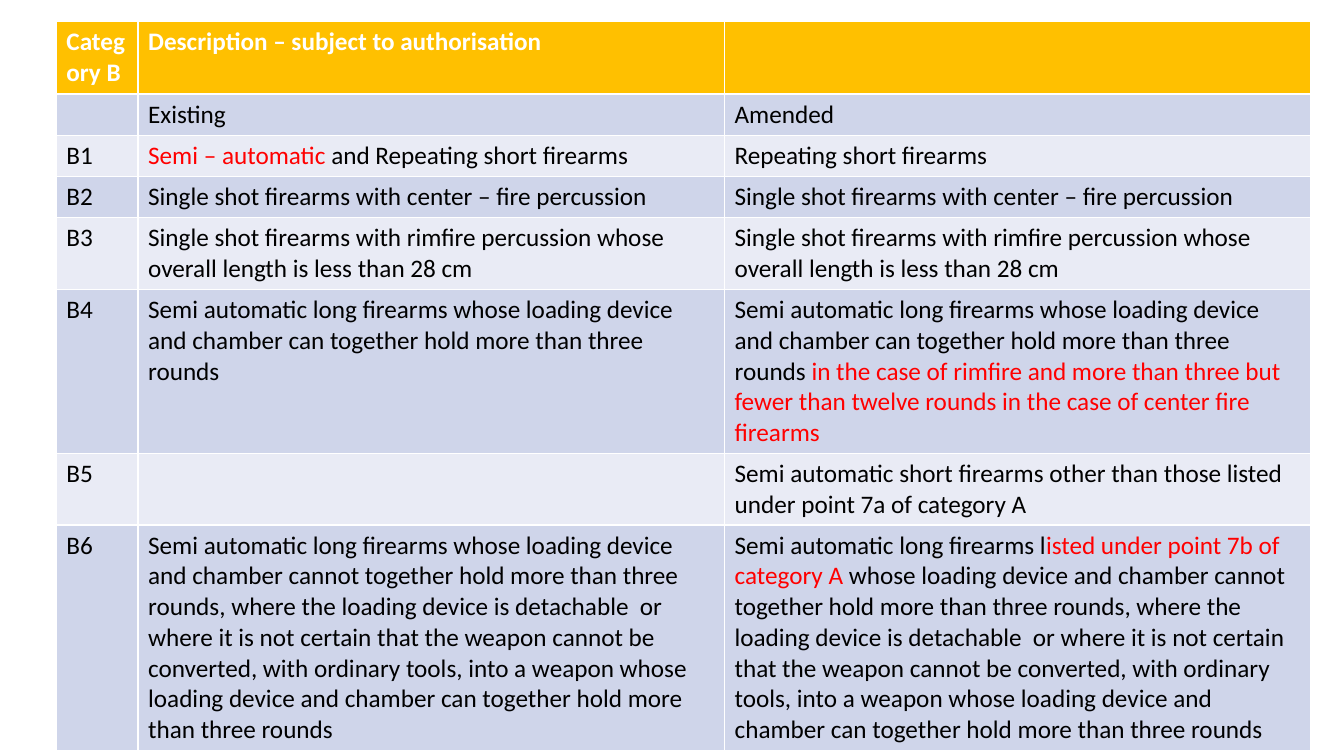
"""Build a slide comparing existing and amended category B firearms."""
from dataclasses import dataclass
from typing import NamedTuple

from pptx import Presentation
from pptx import util as u
from pptx.dml import color


@dataclass(frozen=True)
class Theme:
    face: str = "Calibri"
    size: int = 18
    head: str = "FFC000"
    bands: tuple[str, str] = ("CFD5EA", "E9EBF5")
    light: str = "FFFFFF"
    dark: str = "000000"
    alert: str = "FF0000"


class Span(NamedTuple):
    text: str
    hot: bool = False


class Row(NamedTuple):
    code: str
    old: tuple[Span, ...]
    new: tuple[Span, ...]


THEME = Theme()
WIDTHS = (2.06, 14.78, 14.78)
HEAD, LINE = 1.83, 1.04

SINGLE = (Span("Single shot firearms with center – fire percussion"),)
RIM = (Span("Single shot firearms with rimfire percussion whose overall length is less than 28 cm"),)
LONG = "Semi automatic long firearms "
HOLD = "whose loading device and chamber can together hold more than three rounds"
TOOLS = (
    "whose loading device and chamber cannot together hold more than three rounds, "
    "where the loading device is detachable  or where it is not certain that the weapon "
    "cannot be converted, with ordinary tools, into a weapon " + HOLD
)

ROWS = (
    Row("Category B", (Span("Description – subject to authorisation"),), ()),
    Row("", (Span("Existing"),), (Span("Amended"),)),
    Row("B1", (Span("Semi – automatic ", True), Span("and Repeating short firearms")),
        (Span("Repeating short firearms"),)),
    Row("B2", SINGLE, SINGLE),
    Row("B3", RIM, RIM),
    Row("B4", (Span(LONG + HOLD),),
        (Span(LONG + HOLD + " "),
         Span("in the case of rimfire and more than three but fewer than twelve rounds "
              "in the case of center fire firearms", True))),
    Row("B5", (),
        (Span("Semi automatic short firearms other than those listed "
              "under point 7a of category A"),)),
    Row("B6", (Span(LONG + TOOLS),),
        (Span(LONG + "l"), Span("isted under point 7b of category A ", True), Span(TOOLS))),
)


def fill_cell(cell, spans: tuple[Span, ...], back: str, ink: str, bold: bool) -> None:
    """Colour a cell and write its spans."""
    cell.fill.solid()
    cell.fill.fore_color.rgb = color.RGBColor.from_string(back)
    para = cell.text_frame.paragraphs[0]
    para.font.size = u.Pt(THEME.size)
    for span in spans:
        run = para.add_run()
        run.text = span.text
        font = run.font
        font.name, font.size, font.bold = THEME.face, u.Pt(THEME.size), bold
        font.color.rgb = color.RGBColor.from_string(THEME.alert if span.hot else ink)


def draw_table(slide, rows: tuple[Row, ...]) -> None:
    """Draw the comparison table."""
    high = HEAD + LINE * (len(rows) - 1)
    table = slide.shapes.add_table(
        len(rows), len(WIDTHS), u.Cm(1.42), u.Cm(0.54), u.Cm(sum(WIDTHS)), u.Cm(high)
    ).table
    for col, width in zip(table.columns, WIDTHS):
        col.width = u.Cm(width)
    for i, row in enumerate(rows):
        top = i == 0
        table.rows[i].height = u.Cm(HEAD if top else LINE)
        back = THEME.head if top else THEME.bands[(i - 1) % 2]
        ink = THEME.light if top else THEME.dark
        code = (Span(row.code),) if row.code else ()
        for j, spans in enumerate((code, row.old, row.new)):
            fill_cell(table.cell(i, j), spans, back, ink, top)


def main() -> None:
    """Build and save the deck."""
    deck = Presentation()
    deck.slide_width, deck.slide_height = u.Cm(33.87), u.Cm(19.05)
    slide = deck.slides.add_slide(deck.slide_layouts[6])
    draw_table(slide, ROWS)
    deck.save("out.pptx")


if __name__ == "__main__":
    main()
